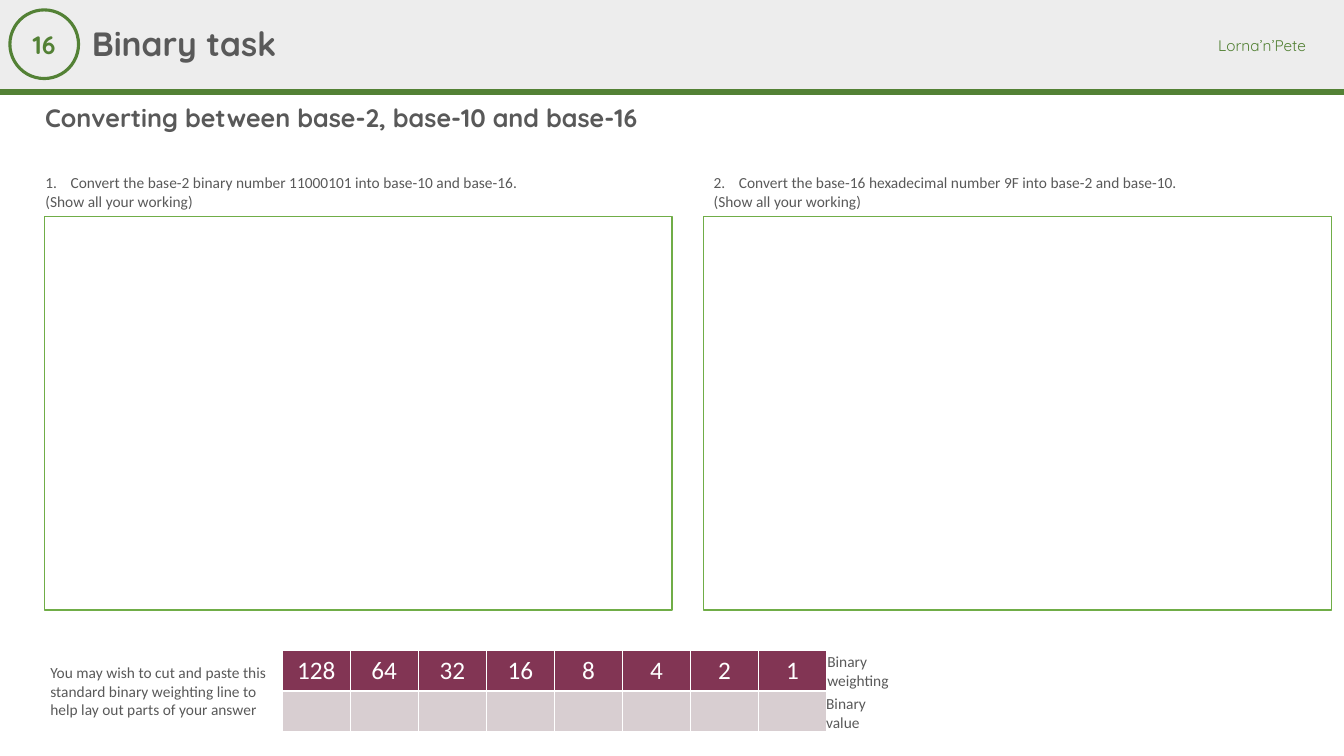
"""Builds the binary task worksheet slide."""
import pptx
import pptx.dml.color
import pptx.enum.shapes
import pptx.enum.text
import pptx.oxml.ns
import pptx.util
from lxml import etree
from pptx.dml.color import RGBColor
from pptx.util import Cm

DARK_GREEN = RGBColor(0x53, 0x81, 0x35)
LIGHT_GREEN = RGBColor(0x70, 0xAD, 0x47)
GREY = RGBColor(0x59, 0x59, 0x59)
BANNER = RGBColor(0xED, 0xED, 0xED)
WHITE = RGBColor(0xFF, 0xFF, 0xFF)
PLUM = RGBColor(0x82, 0x35, 0x54)
PALE_PLUM = RGBColor(0xD8, 0xCE, 0xD1)

CENTER = pptx.enum.text.PP_ALIGN.CENTER
TOP = pptx.enum.text.MSO_ANCHOR.TOP
MIDDLE = pptx.enum.text.MSO_ANCHOR.MIDDLE
SHAPE = pptx.enum.shapes.MSO_SHAPE

SLIDE_WIDTH = 33.87
HINT = ("You may wish to cut and paste this standard binary weighting line "
        "to help lay out parts of your answer")
QUESTIONS = [
    (0.89, 18.1, "Convert the base-2 binary number 11000101 into base-10 and base-16."),
    (17.73, 15.75, "Convert the base-16 hexadecimal number 9F into base-2 and base-10."),
]


def add_xml(parent, tag, **attributes):
    """Append a DrawingML child element."""
    return etree.SubElement(parent, pptx.oxml.ns.qn(tag), attributes)


def style(p, size, color, font="Calibri", bold=False, spacing=1.0):
    """Format a whole paragraph."""
    p.line_spacing = spacing
    p.space_before = pptx.util.Pt(0)
    p.font.name = font
    p.font.size = pptx.util.Pt(size)
    p.font.bold = bold
    p.font.color.rgb = color


def place(sp, left, top, width, height):
    """Set the position and size of a shape."""
    sp.left, sp.top, sp.width, sp.height = Cm(left), Cm(top), Cm(width), Cm(height)


def set_frame(sp, anchor=TOP, wrap=True):
    """Prepare a text frame and return it."""
    tf = sp.text_frame
    tf.word_wrap = wrap
    tf.auto_size = pptx.enum.text.MSO_AUTO_SIZE.NONE
    tf.vertical_anchor = anchor
    return tf


def add_text(s, box, text, size=11, color=GREY, anchor=TOP, wrap=True, **font):
    """Add a one-paragraph text box."""
    sp = s.shapes.add_textbox(*map(Cm, box))
    p = set_frame(sp, anchor, wrap).paragraphs[0]
    p.text = text
    style(p, size, color, **font)


def add_shape(s, kind, box, fill=None, line=None, weight=1):
    """Add a preset shape with an optional fill and outline."""
    sp = s.shapes.add_shape(kind, *map(Cm, box))
    sp.shadow.inherit = False
    if fill is None:
        sp.fill.background()
    else:
        sp.fill.solid()
        sp.fill.fore_color.rgb = fill
    if line is None:
        sp.line.fill.background()
    else:
        sp.line.color.rgb = line
        sp.line.width = pptx.util.Pt(weight)
    return sp


def add_rule(s, y):
    """Add the thick green line under the banner."""
    line = s.shapes.add_connector(
        pptx.enum.shapes.MSO_CONNECTOR.STRAIGHT, 0, Cm(y), Cm(SLIDE_WIDTH), Cm(y))
    line.line.color.rgb = DARK_GREEN
    line.line.width = pptx.util.Pt(4.5)
    add_xml(line._element.spPr, "a:effectLst")


def fill_title(s, text):
    """Place and format the title placeholder above the banner."""
    sp = s.shapes.title
    s.shapes._spTree.append(sp._element)
    place(sp, 2.06, 0.23, 26.19, 1.85)
    p = set_frame(sp, MIDDLE).paragraphs[0]
    p.text = text
    p.alignment = pptx.enum.text.PP_ALIGN.LEFT
    style(p, 24, GREY, font="Quicksand", bold=True, spacing=0.9)


def fill_question(sp, number, left, width, text):
    """Place a numbered question in a body placeholder."""
    place(sp, left, 4.24, width, 1.19)
    tf = set_frame(sp)
    tf.text = f"{text}\n(Show all your working)"
    question, note = tf.paragraphs
    pPr = question._p.get_or_add_pPr()
    pPr.set("marL", str(Cm(0.635)))
    pPr.set("indent", str(-Cm(0.635)))
    add_xml(pPr, "a:buFont", typeface="+mj-lt")
    add_xml(pPr, "a:buAutoNum", type="arabicPeriod", startAt=str(number))
    pPr = note._p.get_or_add_pPr()
    pPr.set("marL", "0")
    pPr.set("indent", "0")
    add_xml(pPr, "a:buNone")
    for p in tf.paragraphs:
        style(p, 11, GREY)


def add_borders(cell):
    """Give a cell thin white borders."""
    tcPr = cell._tc.get_or_add_tcPr()
    for side in ("a:lnL", "a:lnR", "a:lnT", "a:lnB"):
        ln = add_xml(tcPr, side, w=str(pptx.util.Pt(1)))
        add_xml(add_xml(ln, "a:solidFill"), "a:srgbClr", val=str(WHITE))


def add_weighting_table(s, bits=8):
    """Add the binary weighting table with an empty value row."""
    table = s.shapes.add_table(
        2, bits, Cm(7.11), Cm(16.38), Cm(13.72), Cm(2.06)).table
    for i in range(bits):
        for row, (text, fill) in enumerate(
                [(str(2 ** (bits - 1 - i)), PLUM), ("", PALE_PLUM)]):
            cell = table.cell(row, i)
            add_borders(cell)
            cell.fill.solid()
            cell.fill.fore_color.rgb = fill
            p = cell.text_frame.paragraphs[0]
            p.text = text
            p.alignment = CENTER
            style(p, 18, WHITE)


def main():
    """Build and save the slide."""
    prs = pptx.Presentation()
    prs.slide_width, prs.slide_height = Cm(SLIDE_WIDTH), Cm(19.05)
    s = prs.slides.add_slide(prs.slide_layouts[3])

    add_shape(s, SHAPE.RECTANGLE, (0, 0, SLIDE_WIDTH, 2.31), fill=BANNER)
    add_rule(s, 2.31)
    add_text(s, (30.45, 0.79, 3.1, 0.74), "Lorna’n’Pete", color=DARK_GREEN,
             wrap=False, font="Quicksand")
    badge = add_shape(s, SHAPE.OVAL, (0.25, 0.25, 1.73, 1.73),
                      line=DARK_GREEN, weight=2.25)
    p = set_frame(badge, MIDDLE).paragraphs[0]
    p.text = "16"
    p.alignment = CENTER
    style(p, 18, DARK_GREEN, font="Quicksand", bold=True)
    fill_title(s, "Binary task")
    add_text(s, (0.89, 2.51, 21.41, 1.02),
             "Converting between base-2, base-10 and base-16", 18,
             anchor=MIDDLE, font="Quicksand", bold=True, spacing=0.9)

    for number, question in enumerate(QUESTIONS, 1):
        fill_question(s.placeholders[number], number, *question)
    for left in (1.12, 17.73):
        add_shape(s, SHAPE.RECTANGLE, (left, 5.46, 15.82, 9.91), line=LIGHT_GREEN)

    add_weighting_table(s)
    add_text(s, (20.6, 16.31, 2.36, 1.19), "Binary weighting")
    add_text(s, (20.57, 17.37, 2.36, 1.19), "Binary value")
    add_text(s, (1.02, 16.59, 6.05, 1.68), HINT)
    prs.save("out.pptx")


if __name__ == "__main__":
    main()
